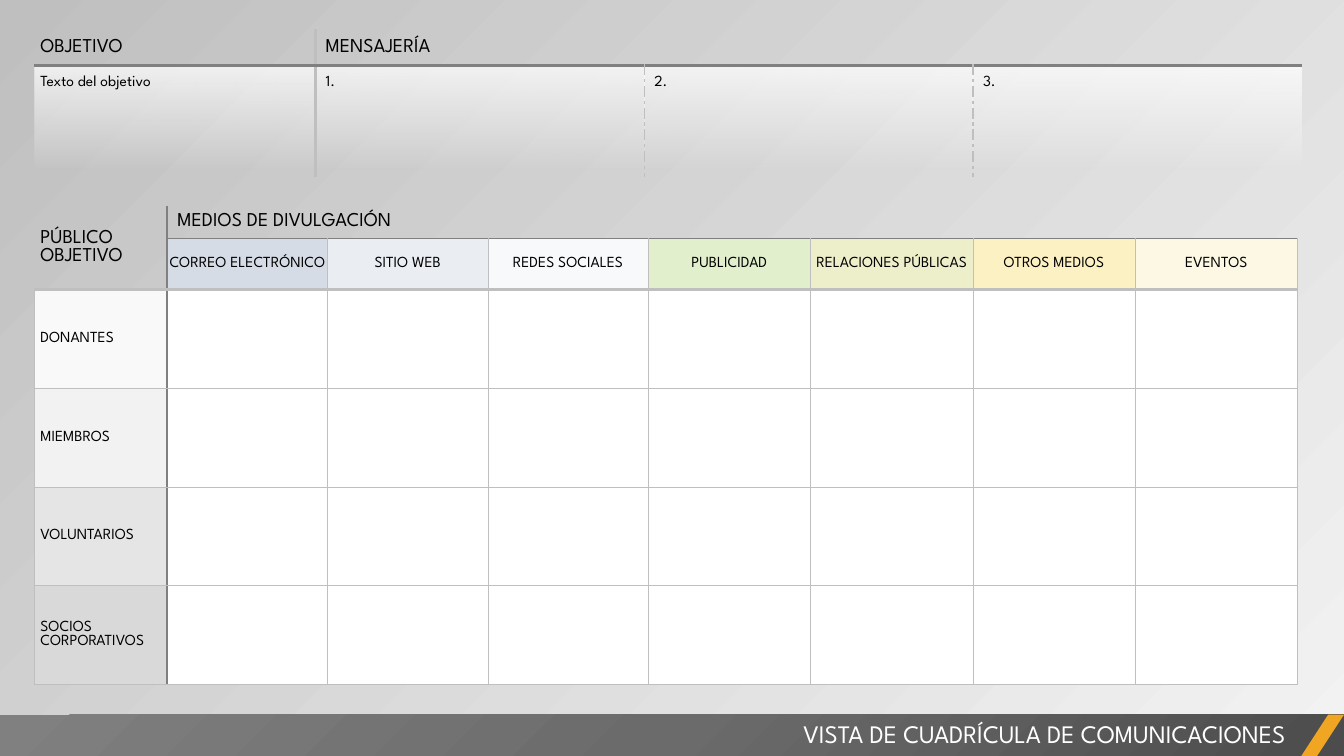
from lxml import etree
from pptx import Presentation
from pptx import util as u
from pptx.dml.color import RGBColor
from pptx.enum import shapes, text
from pptx.oxml import ns

COLORS = {
    "black": "000000", "white": "FFFFFF", "silver": "BFBFBF", "gray": "808080",
    "pale": "F2F2F2", "dark": "4C4C4C", "middle": "6B6B6B", "amber": "F0A622",
}
FONT = "League Spartan"
PLAIN_TABLE = "{2D5ABB26-0587-4C30-8999-92F81FD0307C}"
MEDIA = {
    "CORREO ELECTRÓNICO": "D6DCE5", "SITIO WEB": "EAEEF3", "REDES SOCIALES": "F7F9FB",
    "PUBLICIDAD": "E2EFCD", "RELACIONES PÚBLICAS": "EDEFCB",
    "OTROS MEDIOS": "FCF1C3", "EVENTOS": "FCF8E4",
}
AUDIENCES = {
    "DONANTES": "F9F9F9", "MIEMBROS": "F2F2F2",
    "VOLUNTARIOS": "E5E5E5", "SOCIOS CORPORATIVOS": "D9D9D9",
}
THIN = ("silver", 0.5)
THICK = ("silver", 2.25)
DASHED = ("silver", 1, "sysDashDot")
AXIS = ("gray", 1.5)
HEADING = ("gray", 1)
RULE = ("gray", 2.25)
FADE = [(0, "white", 75), (93, "white", 0)]


def set_values(target, values):
    for name, value in values.items():
        setattr(target, name, value)


def add_node(parent, tag, **attributes):
    node = etree.SubElement(parent, ns.qn(tag))
    for name, value in attributes.items():
        node.set(name, str(value))
    return node


def gradient_fill(fill, owner, stops, angle=None):
    fill.gradient()
    gradient = owner.find(".//" + ns.qn("a:gradFill"))
    for child in list(gradient):
        gradient.remove(child)
    stop_list = add_node(gradient, "a:gsLst")
    for position, color, opacity in stops:
        stop = add_node(stop_list, "a:gs", pos=position * 1000)
        shade = add_node(stop, "a:srgbClr", val=COLORS[color])
        if opacity < 100:
            add_node(shade, "a:alpha", val=opacity * 1000)
    if angle is None:
        circle = add_node(gradient, "a:path", path="circle")
        add_node(circle, "a:fillToRect", l=100000, t=100000)
    else:
        add_node(gradient, "a:lin", ang=angle * 60000, scaled=0)


def solid_fill(fill, color):
    fill.solid()
    fill.fore_color.rgb = RGBColor.from_string(color)


def write(frame, words, size, color="black", align=text.PP_ALIGN.LEFT):
    paragraph = frame.paragraphs[0]
    paragraph.alignment = align
    run = paragraph.add_run()
    run.text = words
    set_values(run.font, {"name": FONT, "size": u.Pt(size), "bold": False})
    run.font.color.rgb = RGBColor.from_string(COLORS[color])


def set_borders(cell, borders):
    properties = cell._tc.get_or_add_tcPr()
    sides = [side for side in "LRTB" if side in borders]
    for index, side in enumerate(sides):
        color, width, *dash = borders[side]
        line = add_node(properties, "a:ln" + side, w=int(u.Pt(width)))
        solid = add_node(line, "a:solidFill")
        add_node(solid, "a:srgbClr", val=COLORS[color])
        add_node(line, "a:prstDash", val=dash[0] if dash else "solid")
        properties.insert(index, line)


def format_cell(cell, words="", size=11, left=0, top=0, color=None, borders=None,
                anchor=text.MSO_ANCHOR.MIDDLE, align=text.PP_ALIGN.LEFT):
    set_values(cell, {
        "margin_left": u.Inches(left), "margin_top": u.Inches(top),
        "margin_right": 0, "margin_bottom": 0, "vertical_anchor": anchor,
    })
    if words:
        write(cell.text_frame, words, size, align=align)
    if color:
        solid_fill(cell.fill, color)
    else:
        cell.fill.background()
    set_borders(cell, borders or {})


def add_grid(slide, left, top, columns, rows):
    frame = slide.shapes.add_table(
        len(rows), len(columns), u.Inches(left), u.Inches(top),
        u.Inches(sum(columns)), u.Inches(sum(rows)))
    table = frame.table
    set_values(table, {"first_row": False, "horz_banding": False})
    table._tbl.tblPr.find(ns.qn("a:tableStyleId")).text = PLAIN_TABLE
    for column, width in zip(table.columns, columns):
        column.width = u.Inches(width)
    for row, height in zip(table.rows, rows):
        row.height = u.Inches(height)
    return table


def add_media_table(slide):
    table = add_grid(slide, 0.34, 2.04, [1.32] + [1.59] * 3 + [1.61] * 4,
                     [0.33, 0.5] + [0.98] * 4)
    table.cell(0, 0).merge(table.cell(1, 0))
    table.cell(0, 1).merge(table.cell(0, 7))
    format_cell(table.cell(0, 0), "PÚBLICO OBJETIVO", 14, 0.06,
                borders={"R": AXIS, "B": THICK})
    format_cell(table.cell(1, 0), borders={"R": AXIS, "B": THICK})
    format_cell(table.cell(0, 1), "MEDIOS DE DIVULGACIÓN", 14, 0.1,
                borders={"L": AXIS, "B": HEADING})
    for column in range(2, 8):
        format_cell(table.cell(0, column), borders={"B": HEADING})
    for column, (medium, color) in enumerate(MEDIA.items(), 1):
        left = AXIS if column == 1 else THIN
        format_cell(table.cell(1, column), medium, color=color, align=text.PP_ALIGN.CENTER,
                    borders={"L": left, "R": THIN, "T": HEADING, "B": THICK})
        for row in range(2, 6):
            format_cell(table.cell(row, column), color=COLORS["white"], borders={
                "L": left, "R": THIN, "T": THICK if row == 2 else THIN, "B": THIN})
    for row, (audience, color) in enumerate(AUDIENCES.items(), 2):
        format_cell(table.cell(row, 0), audience, left=0.06, color=color, borders={
            "L": THIN, "R": AXIS, "T": THICK if row == 2 else THIN, "B": THIN})


def add_message_table(slide):
    table = add_grid(slide, 0.34, 0.29, [2.79] + [3.26] * 3, [0.36, 1.11])
    table.cell(0, 1).merge(table.cell(0, 3))
    format_cell(table.cell(0, 0), "OBJETIVO", 14, 0.06, borders={"R": THICK, "B": RULE})
    format_cell(table.cell(0, 1), "MENSAJERÍA", 14, 0.1, borders={"L": THICK, "B": RULE})
    for column in (2, 3):
        format_cell(table.cell(0, column), borders={"B": RULE})
    dividers = [None, THICK, DASHED, DASHED, None]
    for column, words in enumerate(["Texto del objetivo", "1.", "2.", "3."]):
        cell = table.cell(1, column)
        edges = {"L": dividers[column], "R": dividers[column + 1], "T": RULE}
        format_cell(cell, words, left=0.1 if column else 0.06, top=0.1,
                    anchor=text.MSO_ANCHOR.TOP,
                    borders={side: edge for side, edge in edges.items() if edge})
        gradient_fill(cell.fill, cell._tc, FADE, 90)


def add_block(slide, kind, left, width):
    shape = slide.shapes.add_shape(
        kind, u.Inches(left), u.Inches(7.09), u.Inches(width), u.Inches(0.42))
    shape.shadow.inherit = False
    shape.line.fill.background()
    return shape


def add_footer(slide):
    bar = add_block(slide, shapes.MSO_SHAPE.RECTANGLE, 0, 13.33)
    gradient_fill(bar.fill, bar._element,
                  [(0, "dark", 100), (50, "middle", 100), (100, "gray", 100)])
    accent = add_block(slide, shapes.MSO_SHAPE.PARALLELOGRAM, 12.9, 0.43)
    accent.adjustments[0] = 0.65
    solid_fill(accent.fill, COLORS["amber"])


def place_title(slide):
    title = slide.shapes.title
    set_values(title, {"left": u.Inches(5.25), "top": u.Inches(7.08),
                       "width": u.Inches(7.6), "height": u.Inches(0.4)})
    set_values(title.text_frame, {"word_wrap": True, "auto_size": text.MSO_AUTO_SIZE.NONE,
                                  "vertical_anchor": text.MSO_ANCHOR.TOP})
    write(title.text_frame, "VISTA DE CUADRÍCULA DE COMUNICACIONES", 18, "white",
          text.PP_ALIGN.RIGHT)
    slide.shapes._spTree.append(title._element)


def main():
    presentation = Presentation()
    set_values(presentation, {"slide_width": u.Inches(13.33), "slide_height": u.Inches(7.5)})
    slide = presentation.slides.add_slide(presentation.slide_layouts[5])
    gradient_fill(slide.background.fill, slide._element,
                  [(0, "pale", 40), (100, "silver", 100)], 225)
    add_media_table(slide)
    add_footer(slide)
    place_title(slide)
    add_message_table(slide)
    presentation.save("out.pptx")


if __name__ == "__main__":
    main()
